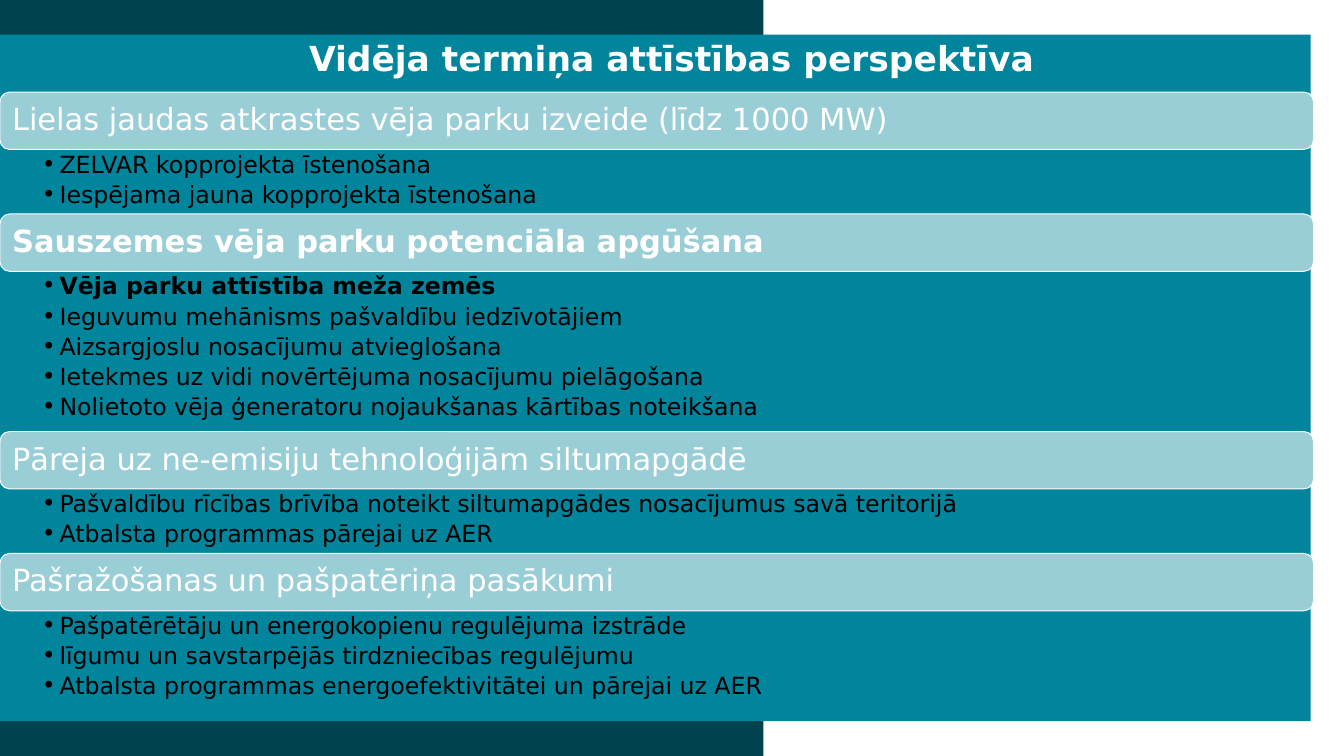
"""Build a slide of four headed bullet sections on the medium-term outlook."""
from dataclasses import dataclass

import pptx
import pptx.dml.color
import pptx.enum.shapes
import pptx.enum.text
import pptx.oxml.ns
import pptx.shapes.autoshape
import pptx.slide
import pptx.text.text
import pptx.util
from lxml import etree

SLIDE_WIDTH, SLIDE_HEIGHT = 18.96, 10.67
FONT = "DejaVu Sans"
DARK, TEAL, PALE, WHITE, BLACK = "00434E", "00859D", "99CED7", "FFFFFF", "000000"

SECTIONS_TOP = 12.18
SECTION_WIDTH = 97.73
HEADING_HEIGHT = 7.59
BULLET_HEIGHT = 4.22
BULLETS_PADDING = 0.09

ANCHOR = pptx.enum.text.MSO_ANCHOR
ALIGN = pptx.enum.text.PP_ALIGN
PRESET = pptx.enum.shapes.MSO_SHAPE


@dataclass(frozen=True)
class Area:
    """A rectangle in percent of the slide's width and height."""
    left: float
    top: float
    width: float
    height: float

    def emu(self) -> tuple[int, int, int, int]:
        """Return left, top, width and height in EMU."""
        return (across(self.left), down(self.top), across(self.width), down(self.height))


@dataclass(frozen=True)
class Style:
    """The look of a run of text."""
    size: float
    colour: str
    bold: bool = False


@dataclass(frozen=True)
class Section:
    """A heading with its bullets; emphasis makes heading and first bullet bold."""
    heading: str
    bullets: tuple[str, ...]
    emphasis: bool = False

    @property
    def bullets_height(self) -> float:
        """Return the height of the bullet list in percent."""
        return len(self.bullets) * BULLET_HEIGHT + BULLETS_PADDING


SECTIONS = (
    Section("Lielas jaudas atkrastes vēja parku izveide (līdz 1000 MW)", (
        "ZELVAR kopprojekta īstenošana",
        "Iespējama jauna kopprojekta īstenošana",
    )),
    Section("Sauszemes vēja parku potenciāla apgūšana", (
        "Vēja parku attīstība meža zemēs",
        "Ieguvumu mehānisms pašvaldību iedzīvotājiem",
        "Aizsargjoslu nosacījumu atvieglošana",
        "Ietekmes uz vidi novērtējuma nosacījumu pielāgošana",
        "Nolietoto vēja ģeneratoru nojaukšanas kārtības noteikšana",
    ), emphasis=True),
    Section("Pāreja uz ne-emisiju tehnoloģijām siltumapgādē", (
        "Pašvaldību rīcības brīvība noteikt siltumapgādes nosacījumus savā teritorijā",
        "Atbalsta programmas pārejai uz AER",
    )),
    Section("Pašražošanas un pašpatēriņa pasākumi", (
        "Pašpatērētāju un energokopienu regulējuma izstrāde",
        "līgumu un savstarpējās tirdzniecības regulējumu",
        "Atbalsta programmas energoefektivitātei un pārejai uz AER",
    )),
)


def across(percent: float) -> int:
    """Return a share of the slide's width in EMU."""
    return pptx.util.Inches(SLIDE_WIDTH * percent / 100)


def down(percent: float) -> int:
    """Return a share of the slide's height in EMU."""
    return pptx.util.Inches(SLIDE_HEIGHT * percent / 100)


def rgb(colour: str) -> pptx.dml.color.RGBColor:
    """Return the colour of a hex string."""
    return pptx.dml.color.RGBColor.from_string(colour)


def add_block(slide: pptx.slide.Slide, preset: PRESET, area: Area,
              fill: str) -> pptx.shapes.autoshape.Shape:
    """Add a filled shape without line or shadow."""
    block = slide.shapes.add_shape(preset, *area.emu())
    block.shadow.inherit = False
    block.fill.solid()
    block.fill.fore_color.rgb = rgb(fill)
    block.line.fill.background()
    return block


def set_frame(frame: pptx.text.text.TextFrame, anchor: ANCHOR,
              left: float, top: float, right: float, bottom: float) -> None:
    """Set wrapping, anchor and insets, the insets in percent of the slide."""
    frame.word_wrap = True
    frame.auto_size = pptx.enum.text.MSO_AUTO_SIZE.NONE
    frame.vertical_anchor = anchor
    frame.margin_left, frame.margin_right = across(left), across(right)
    frame.margin_top, frame.margin_bottom = down(top), down(bottom)


def write(paragraph: pptx.text.text._Paragraph, text: str, style: Style,
          align: ALIGN = ALIGN.LEFT, spacing: float = 0.9,
          before: float = 0, after: float = 0) -> None:
    """Write one run into a paragraph and format both."""
    paragraph.alignment = align
    paragraph.line_spacing = spacing
    paragraph.space_before = pptx.util.Pt(before)
    paragraph.space_after = pptx.util.Pt(after)
    run = paragraph.add_run()
    run.text = text
    run.font.name = FONT
    run.font.size = pptx.util.Pt(style.size)
    run.font.bold = style.bold
    run.font.color.rgb = rgb(style.colour)


def add_bullet_mark(paragraph: pptx.text.text._Paragraph) -> None:
    """Give a paragraph a hanging round bullet."""
    properties = paragraph._p.get_or_add_pPr()
    hang = across(1.32)
    properties.set("marL", str(hang))
    properties.set("indent", str(-hang))
    etree.SubElement(properties, pptx.oxml.ns.qn("a:buFont")).set("typeface", FONT)
    etree.SubElement(properties, pptx.oxml.ns.qn("a:buChar")).set("char", "•")


def add_title(slide: pptx.slide.Slide) -> None:
    """Place the title in front of the backdrop."""
    title = slide.shapes.title
    for area, fill in ((Area(-0.21, 0, 57.01, 100), DARK),
                       (Area(-0.21, 4.59, 97.73, 90.82), TEAL)):
        title.element.addprevious(add_block(slide, PRESET.RECTANGLE, area, fill).element)
    title.left, title.top, title.width, title.height = Area(0, 5.25, 100, 5.81).emu()
    set_frame(title.text_frame, ANCHOR.MIDDLE, 0.53, 0.47, 0.53, 0.47)
    write(title.text_frame.paragraphs[0], "Vidēja termiņa attīstības perspektīva",
          Style(35, WHITE, True), ALIGN.CENTER, spacing=0.8, before=10)


def add_section(slide: pptx.slide.Slide, section: Section, top: float) -> float:
    """Draw a heading bar with its bullets and return the bottom edge."""
    bar = add_block(slide, PRESET.ROUNDED_RECTANGLE,
                    Area(0, top, SECTION_WIDTH, HEADING_HEIGHT), PALE)
    bar.line.color.rgb = rgb(WHITE)
    bar.line.width = pptx.util.Pt(1)
    set_frame(bar.text_frame, ANCHOR.MIDDLE, 0.69, 1.22, 0.69, 1.22)
    write(bar.text_frame.paragraphs[0], section.heading, Style(31, WHITE, section.emphasis))

    top += HEADING_HEIGHT
    area = Area(0, top, SECTION_WIDTH, section.bullets_height)
    frame = slide.shapes.add_textbox(*area.emu()).text_frame
    set_frame(frame, ANCHOR.TOP, 3.11, 0.42, 1.27, 0.37)
    for index, bullet in enumerate(section.bullets):
        paragraph = frame.add_paragraph() if index else frame.paragraphs[0]
        paragraph.level = 1
        write(paragraph, bullet, Style(24, BLACK, section.emphasis and index == 0), after=4.8)
        add_bullet_mark(paragraph)
    return top + section.bullets_height


def main() -> None:
    """Build and save the slide."""
    deck = pptx.Presentation()
    deck.slide_width, deck.slide_height = across(100), down(100)
    slide = deck.slides.add_slide(deck.slide_layouts.get_by_name("Title Only"))
    add_title(slide)
    top = SECTIONS_TOP
    for section in SECTIONS:
        top = add_section(slide, section, top)
    deck.save("out.pptx")


if __name__ == "__main__":
    main()
